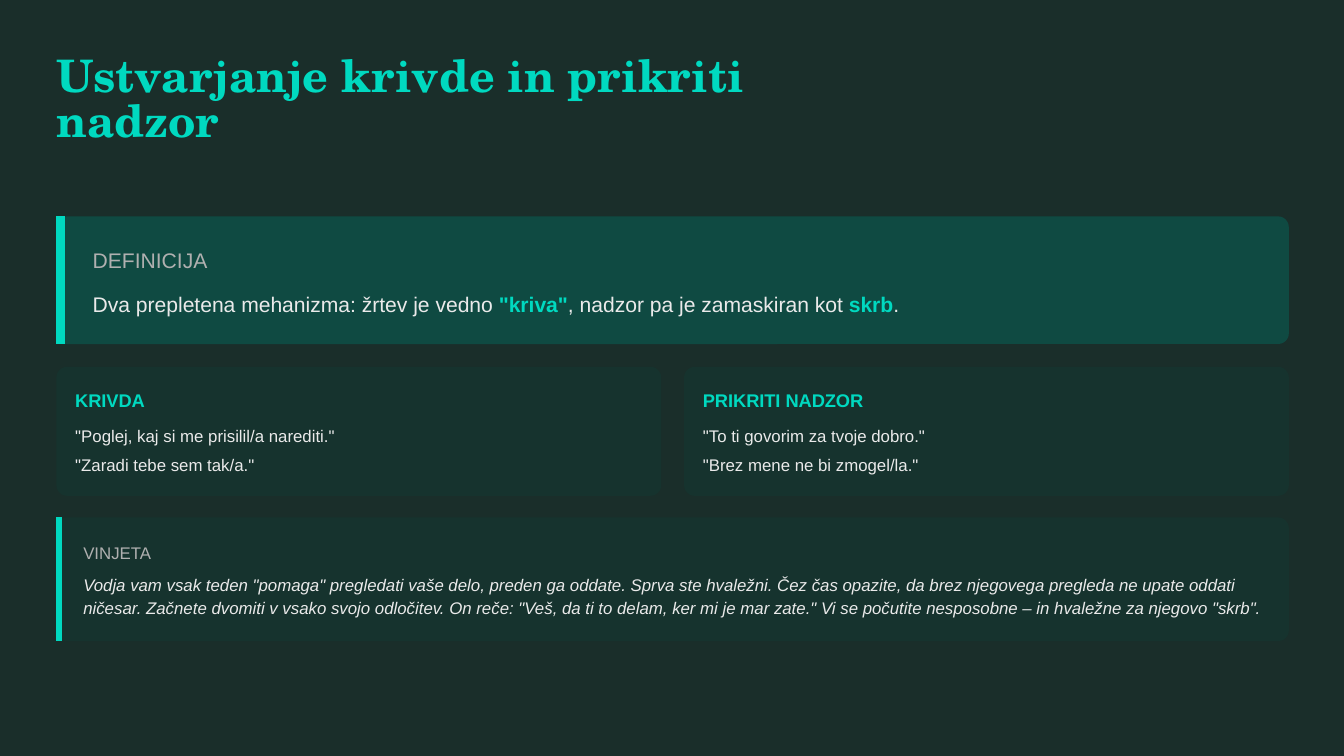
"""Builds a slide on guilt and covert control: definition, two example cards and a vignette."""
from lxml.etree import SubElement
from pptx import Presentation
from pptx.dml.color import RGBColor as RGB
from pptx.enum.shapes import MSO_CONNECTOR as CONN, MSO_SHAPE as SHAPE
from pptx.oxml.ns import qn
from pptx.util import Inches, Pt

THEME = {
    "bg": "1A2E2A", "accent": "00D9C0", "panel": "0F4A42", "card": "16332E",
    "muted": "B0B0B0", "body": "EAEAEA",
    "head_font": "TeX Gyre Schola", "body_font": "Arial",
    "title": 24, "lead": 11.25, "heading": 9.75, "small": 9,
}
LEFT, WIDTH, RADIUS = 0.42, 9.17, 0.08


class SlideBuilder:
    def __init__(self, prs, theme):
        self.theme = theme
        self.s = prs.slides.add_slide(prs.slide_layouts[6])
        fill = self.s.background.fill
        fill.solid()
        fill.fore_color.rgb = self.color("bg")

    def color(self, name):
        return RGB.from_string(self.theme[name])

    def text(self, x, y, w, h, runs, size, leading, font="body_font", **fmt):
        tf = self.s.shapes.add_textbox(*map(Inches, (x, y, w, h))).text_frame
        frame = {"word_wrap": True, "margin_left": 0, "margin_top": 0,
                 "margin_right": 0, "margin_bottom": 0}
        for key, value in frame.items():
            setattr(tf, key, value)
        p = tf.paragraphs[0]
        p.line_spacing = Pt(leading)
        for content, color, bold in runs:
            r = p.add_run()
            r.text = content
            style = {"name": self.theme[font], "size": Pt(self.theme[size]), "bold": bold, **fmt}
            for key, value in style.items():
                setattr(r.font, key, value)
            r.font.color.rgb = self.color(color)

    def card(self, x, y, w, h, fill):
        sp = self.s.shapes.add_shape(SHAPE.ROUNDED_RECTANGLE, *map(Inches, (x, y, w, h)))
        sp.adjustments[0] = RADIUS / h
        sp.shadow.inherit = False
        sp.fill.solid()
        sp.fill.fore_color.rgb = self.color(fill)
        sp.line.fill.background()

    def bar(self, x, y, h, weight):
        ln = self.s.shapes.add_connector(CONN.STRAIGHT, *map(Inches, (x, y, x, y + h)))
        ln.line.color.rgb = self.color("accent")
        ln.line.width = Pt(weight)
        SubElement(ln._element.spPr, qn("a:effectLst"))


def main():
    prs = Presentation()
    prs.slide_width, prs.slide_height = Inches(10), Inches(10) * 9 // 16
    b = SlideBuilder(prs, THEME)

    b.text(LEFT, 0.42, 5.39, 0.33, [("Ustvarjanje krivde in prikriti nadzor", "accent", True)],
           "title", 24, "head_font")

    b.card(LEFT, 1.61, WIDTH, 0.95, "panel")
    b.bar(0.45, 1.61, 0.95, 4.5)
    b.text(0.69, 1.81, 8.86, 0.22, [("DEFINICIJA", "muted", False)], "lead", 15.8)
    b.text(0.69, 2.12, 8.86, 0.23, [
        ("Dva prepletena mehanizma: žrtev je vedno ", "body", False),
        ('"kriva"', "accent", True),
        (", nadzor pa je zamaskiran kot ", "body", False),
        ("skrb", "accent", True),
        (".", "body", False),
    ], "lead", 16.9)

    columns = [
        ("KRIVDA", ['"Poglej, kaj si me prisilil/a narediti."', '"Zaradi tebe sem tak/a."']),
        ("PRIKRITI NADZOR", ['"To ti govorim za tvoje dobro."', '"Brez mene ne bi zmogel/la."']),
    ]
    card_w = 4.5
    for col, (heading, quotes) in enumerate(columns):
        x = LEFT + col * (WIDTH - card_w)
        b.card(x, 2.73, card_w, 0.96, "card")
        b.text(x + 0.14, 2.87, 4.29, 0.19, [(heading, "accent", True)], "heading", 13.7)
        for row, quote in enumerate(quotes):
            b.text(x + 0.14, 3.14 + row * 0.22, 4.29, 0.17, [(quote, "body", False)], "small", 12.6)

    b.card(LEFT, 3.85, WIDTH, 0.92, "card")
    b.bar(0.44, 3.85, 0.92, 3)
    b.text(0.62, 4.01, 8.97, 0.17, [("VINJETA", "muted", False)], "small", 12.6)
    vignette = (
        'Vodja vam vsak teden "pomaga" pregledati vaše delo, preden ga oddate. Sprva ste hvaležni. '
        "Čez čas opazite, da brez njegovega pregleda ne upate oddati ničesar. "
        "Začnete dvomiti v vsako svojo odločitev. "
        'On reče: "Veš, da ti to delam, ker mi je mar zate." '
        'Vi se počutite nesposobne – in hvaležne za njegovo "skrb".'
    )
    b.text(0.62, 4.25, 8.97, 0.35, [(vignette, "body", False)], "small", 12.6, italic=True)

    prs.save("out.pptx")


if __name__ == "__main__":
    main()
